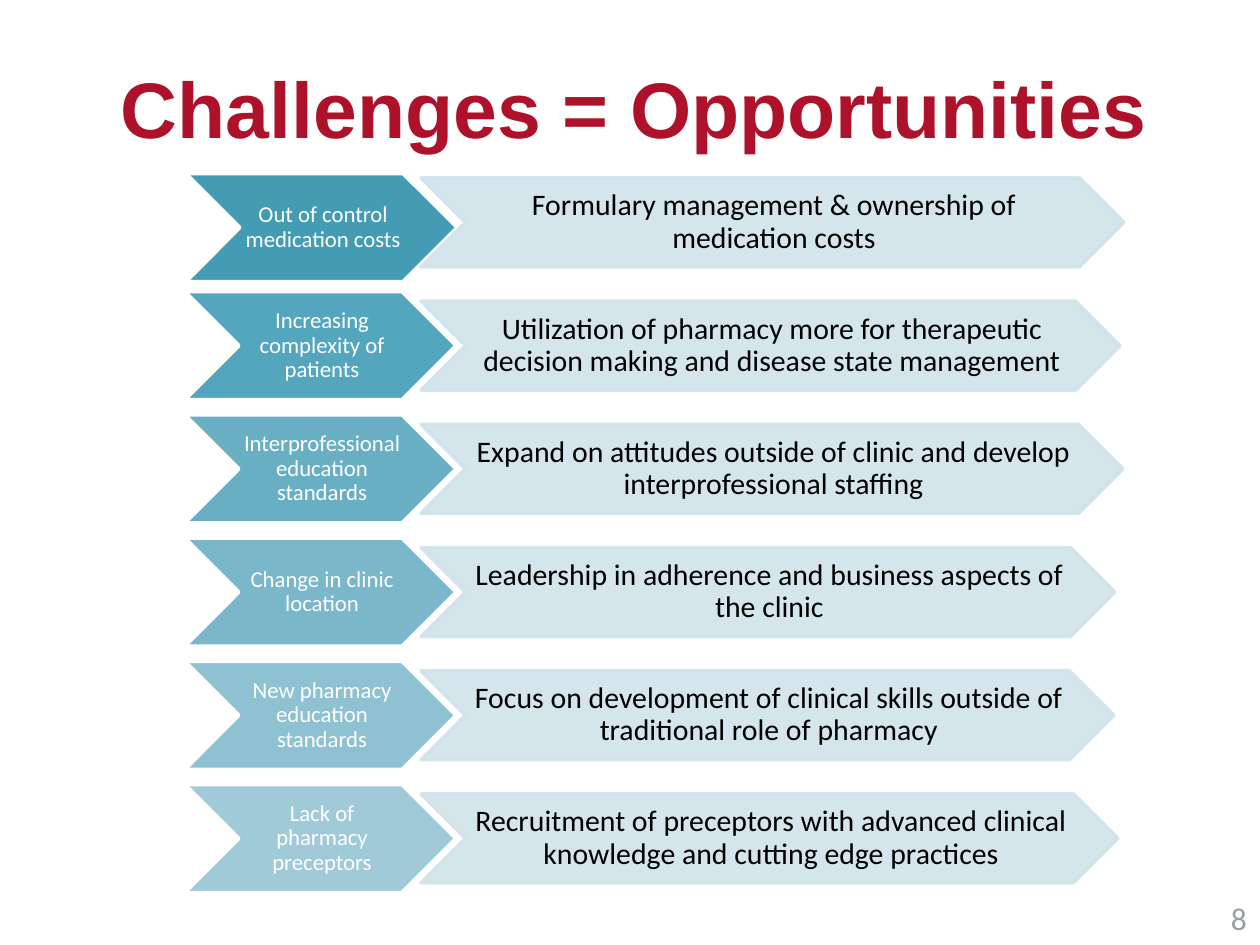
from lxml import etree
from pptx import Presentation
from pptx.dml.color import RGBColor
from pptx.enum.shapes import MSO_SHAPE
from pptx.enum.text import MSO_ANCHOR, MSO_AUTO_SIZE, PP_ALIGN
from pptx.oxml.ns import qn
from pptx.util import Emu, Pt

CHEVRON = MSO_SHAPE.CHEVRON
LEFT, CENTER, RIGHT = PP_ALIGN.LEFT, PP_ALIGN.CENTER, PP_ALIGN.RIGHT
TOP, MIDDLE, BOTTOM = MSO_ANCHOR.TOP, MSO_ANCHOR.MIDDLE, MSO_ANCHOR.BOTTOM

# Content
TITLE = "Challenges = Opportunities"
PAGE = "8"
# challenge, its fill, opportunity, opportunity width in px
ROWS = [
    ("Out of control medication costs", "449CB4",
     "Formulary management & ownership of medication costs", 703),
    ("Increasing complexity of patients", "54A6BE",
     "Utilization of pharmacy more for therapeutic decision making "
     "and disease state management", 699),
    ("Interprofessional education standards", "68AFC4",
     "Expand on attitudes outside of clinic and develop "
     "interprofessional staffing", 702),
    ("Change in clinic location", "7BB7CB",
     "Leadership in adherence and business aspects of the clinic", 694),
    ("New pharmacy education standards", "8EC1D2",
     "Focus on development of clinical skills outside of "
     "traditional role of pharmacy", 693),
    ("Lack of pharmacy preceptors", "A1CAD9",
     "Recruitment of preceptors with advanced clinical knowledge "
     "and cutting edge practices", 697),
]
COLORS = {"title": "AD122A", "band": "D0E3EA", "white": "FFFFFF",
          "black": "000000", "page": "989EA3"}

# Layout in px
PX = 914400 / 126
ROW_TOP, ROW_PITCH = 178, 123.2
CHALLENGE_X, CHALLENGE_W, CHALLENGE_H = 185, 271, 108
BAND_X, BAND_H = 421, 89
FIRST_NUDGE = (1, 5)  # the first challenge sits slightly right and low


def px(n):
    return Emu(round(n * PX))


def rgb(color):
    return RGBColor.from_string(color)


def write(sp, text, size, color, font="Calibri", bold=False, align=CENTER,
          anchor=MIDDLE, spacing=0.9, insets=(3, 1, 0, 1)):
    tf = sp.text_frame
    tf.word_wrap = True
    tf.auto_size = MSO_AUTO_SIZE.NONE
    tf.vertical_anchor = anchor
    (tf.margin_left, tf.margin_top,
     tf.margin_right, tf.margin_bottom) = map(px, insets)
    p = tf.paragraphs[0]
    p.alignment = align
    p.line_spacing = spacing
    r = p.add_run()
    r.text = text
    r.font.name, r.font.size, r.font.bold = font, Pt(size), bold
    r.font.color.rgb = rgb(color)


def add_chevron(slide, x, y, w, h, fill, line, alpha=None):
    sp = slide.shapes.add_shape(CHEVRON, px(x), px(y), px(w), px(h))
    sp.shadow.inherit = False
    sp.fill.solid()
    sp.fill.fore_color.rgb = rgb(fill)
    sp.line.color.rgb = rgb(line)
    sp.line.width = Pt(2)
    if alpha:
        for clr in sp._element.spPr.iter(qn("a:srgbClr")):
            etree.SubElement(clr, qn("a:alpha"), val=str(alpha * 1000))
    return sp


def main():
    prs = Presentation()
    prs.slide_width, prs.slide_height = px(1260), px(945)
    s = prs.slides.add_slide(prs.slide_layouts[5])

    # Title
    title = s.shapes.title
    title.left, title.top, title.width, title.height = map(
        px, (108, 54, 1128, 102))
    write(title, TITLE, 45, COLORS["title"], font="Arial", bold=True,
          align=LEFT, anchor=BOTTOM, insets=(13, 0, 13, 0))

    # Challenge and opportunity rows
    for i, (challenge, fill, opportunity, band_w) in enumerate(ROWS):
        y = ROW_TOP + i * ROW_PITCH
        dx, dy = (0, 0) if i else FIRST_NUDGE
        sp = add_chevron(s, CHALLENGE_X + dx, y - 9.5 + dy, CHALLENGE_W,
                         CHALLENGE_H, fill, COLORS["white"])
        write(sp, challenge, 13, COLORS["white"])
        sp = add_chevron(s, BAND_X, y, band_w, BAND_H,
                         COLORS["band"], COLORS["band"], alpha=90)
        write(sp, opportunity, 17, COLORS["black"])

    # Page number
    box = s.shapes.add_textbox(px(1086), px(893), px(174), px(50))
    write(box, PAGE, 18, COLORS["page"], align=RIGHT, anchor=TOP,
          spacing=1.0, insets=(13, 6, 13, 6))

    prs.save("out.pptx")


if __name__ == "__main__":
    main()
